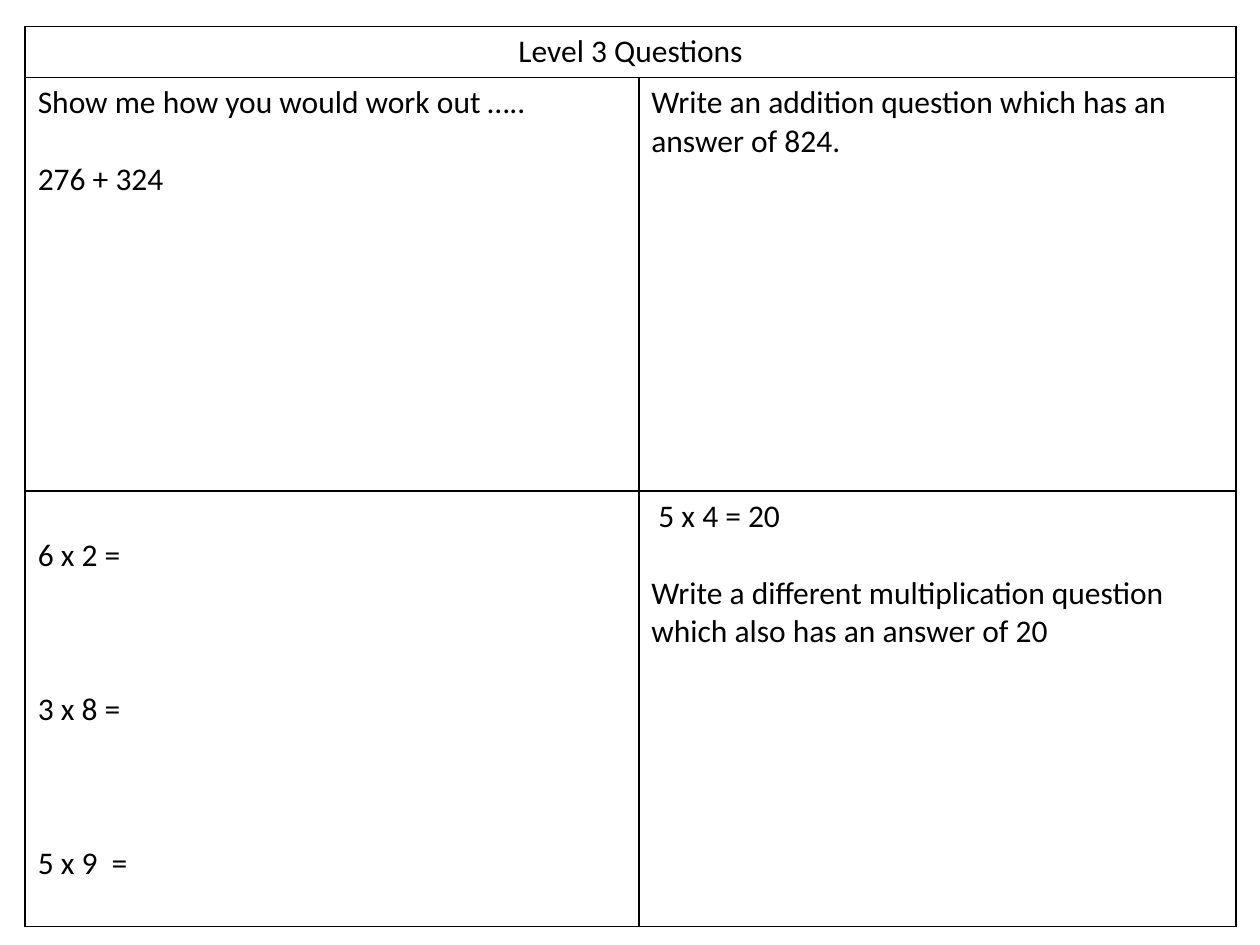
from dataclasses import dataclass

import pptx
import pptx.dml.color
import pptx.enum.text
import pptx.oxml
import pptx.oxml.ns
import pptx.util

Inches = pptx.util.Inches
Pt = pptx.util.Pt
ALIGN = pptx.enum.text.PP_ALIGN

COLORS = {"ink": "000000"}
FONT = "Calibri"
LINE_PT = 22
COL_WIDTHS = (4.87, 4.74)
ROW_HEIGHTS = (0.4, 3.28, 3.46)


@dataclass
class Question:
    row: int
    col: int
    lines: tuple[str, ...]
    blank_lines: int = 0
    top: float = 0.05
    align: ALIGN = ALIGN.LEFT


QUESTIONS = (
    Question(0, 0, ("Level 3 Questions",), align=ALIGN.CENTER),
    Question(1, 0, ("Show me how you would work out …..", "276 + 324"), 1),
    Question(1, 1, ("Write an addition question which has an answer of 824.",)),
    Question(2, 0, ("6 x 2 =", "3 x 8 =", "5 x 9  ="), 3, top=0.36),
    Question(2, 1, (" 5 x 4 = 20",
                    "Write a different multiplication question which also has an answer of 20"), 1),
)


def add_text(p, text: str, *, size: float = 18, color: str = "ink",
             align: ALIGN = ALIGN.LEFT, before: float = 0) -> None:
    p.alignment = align
    p.space_before = Pt(before)
    r = p.add_run()
    r.text = text
    r.font.name = FONT
    r.font.size = Pt(size)
    r.font.color.rgb = pptx.dml.color.RGBColor.from_string(COLORS[color])


def set_borders(cell, color: str = "ink", width: float = 1) -> None:
    tc_pr = cell._tc.get_or_add_tcPr()
    for i, side in enumerate(("lnL", "lnR", "lnT", "lnB")):
        tc_pr.insert(i, pptx.oxml.parse_xml(
            f'<a:{side} {pptx.oxml.ns.nsdecls("a")} w="{Pt(width)}">'
            f'<a:solidFill><a:srgbClr val="{COLORS[color]}"/></a:solidFill></a:{side}>'))


def fill_cell(cell, question: Question) -> None:
    cell.margin_top = Inches(question.top)
    tf = cell.text_frame
    for i, line in enumerate(question.lines):
        p = tf.add_paragraph() if i else tf.paragraphs[0]
        before = question.blank_lines * LINE_PT if i else 0
        add_text(p, line, align=question.align, before=before)


def main() -> None:
    prs = pptx.Presentation()
    prs.slide_width, prs.slide_height = Inches(10), Inches(7.5)
    s = prs.slides.add_slide(prs.slide_layouts[6])
    table = s.shapes.add_table(
        len(ROW_HEIGHTS), len(COL_WIDTHS), Inches(0.2), Inches(0.21),
        Inches(sum(COL_WIDTHS)), Inches(sum(ROW_HEIGHTS))).table
    table.first_row = table.horz_banding = False
    for column, width in zip(table.columns, COL_WIDTHS):
        column.width = Inches(width)
    for row, height in zip(table.rows, ROW_HEIGHTS):
        row.height = Inches(height)
    for cell in table.iter_cells():
        cell.fill.background()
        set_borders(cell)
    table.cell(0, 0).merge(table.cell(0, 1))
    for question in QUESTIONS:
        fill_cell(table.cell(question.row, question.col), question)
    prs.save("out.pptx")


if __name__ == "__main__":
    main()
